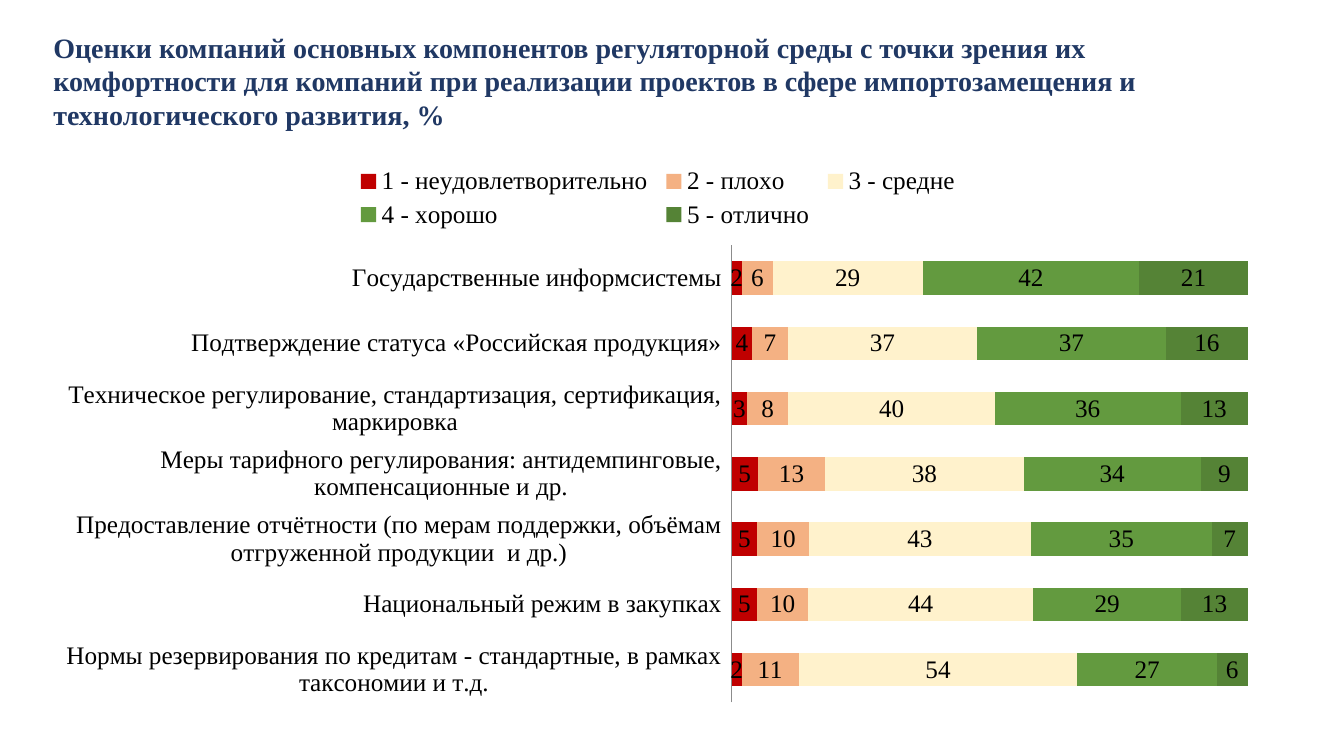
from lxml.etree import SubElement
from pptx import Presentation
from pptx.chart.data import CategoryChartData
from pptx.dml.color import RGBColor
from pptx.enum.chart import XL_CHART_TYPE as ChartType, XL_LEGEND_POSITION as LegendPosition
from pptx.enum.chart import XL_TICK_LABEL_POSITION as LabelPosition, XL_TICK_MARK as TickMark
from pptx.enum.text import MSO_AUTO_SIZE as AutoSize
from pptx.oxml.ns import qn
from pptx.util import Inches, Pt

FONT = "Times New Roman"
NAVY = RGBColor(0x20, 0x38, 0x64)
BLACK = RGBColor(0x00, 0x00, 0x00)
GREY = RGBColor(0x8C, 0x8C, 0x8C)
RED = RGBColor(0xC0, 0x00, 0x00)
ORANGE = RGBColor(0xF4, 0xB1, 0x83)
CREAM = RGBColor(0xFF, 0xF2, 0xCC)
GREEN = RGBColor(0x63, 0x9A, 0x3F)
DARK_GREEN = RGBColor(0x55, 0x83, 0x36)

HEADING = (
    "Оценки компаний основных компонентов регуляторной среды с точки зрения их "
    "комфортности для компаний при реализации проектов в сфере импортозамещения и "
    "технологического развития, %"
)
COMPONENTS = [
    "Государственные информсистемы",
    "Подтверждение статуса «Российская продукция»",
    "Техническое регулирование, стандартизация, сертификация, маркировка",
    "Меры тарифного регулирования: антидемпинговые, компенсационные и др.",
    "Предоставление отчётности (по мерам поддержки, объёмам отгруженной продукции  и др.)",
    "Национальный режим в закупках",
    "Нормы резервирования по кредитам - стандартные, в рамках таксономии и т.д.",
]
RATINGS = [
    ("1 - неудовлетворительно", RED, (2, 4, 3, 5, 5, 5, 2)),
    ("2 - плохо", ORANGE, (6, 7, 8, 13, 10, 10, 11)),
    ("3 - средне", CREAM, (29, 37, 40, 38, 43, 44, 54)),
    ("4 - хорошо", GREEN, (42, 37, 36, 34, 35, 29, 27)),
    ("5 - отлично", DARK_GREEN, (21, 16, 13, 9, 7, 13, 6)),
]
PLOT_FRAME = (0.56, 0.16, 0.42, 0.82)
LEGEND_FRAME = (0.25, 0.01, 0.5, 0.13)


def style_font(font, size, color):
    font.name = FONT
    font.size = Pt(size)
    font.color.rgb = color


def place(part, position, frame, inner=False):
    for previous in part.findall(qn("c:layout")):
        part.remove(previous)
    layout = SubElement(part, qn("c:layout"))
    part.insert(position, layout)
    manual = SubElement(layout, qn("c:manualLayout"))
    if inner:
        SubElement(manual, qn("c:layoutTarget")).set("val", "inner")
    for tag in ("xMode", "yMode"):
        SubElement(manual, qn(f"c:{tag}")).set("val", "edge")
    for tag, share in zip("xywh", frame):
        SubElement(manual, qn(f"c:{tag}")).set("val", str(share))


def add_heading(slide):
    box = slide.shapes.add_textbox(Inches(0.43), Inches(0.25), Inches(11.68), Inches(1.11))
    box.text_frame.word_wrap = True
    box.text_frame.auto_size = AutoSize.SHAPE_TO_FIT_TEXT
    heading = box.text_frame.paragraphs[0]
    heading.text = HEADING
    style_font(heading.font, 20, NAVY)
    heading.font.bold = True


def add_ratings(slide):
    data = CategoryChartData(number_format="0")
    data.categories = COMPONENTS
    for name, _, shares in RATINGS:
        data.add_series(name, shares)
    chart = slide.shapes.add_chart(
        ChartType.BAR_STACKED_100, Inches(0.43), Inches(1.55), Inches(12.19), Inches(5.53), data
    ).chart
    style_font(chart.font, 18, BLACK)
    chart.has_title = False

    bars = chart.plots[0]
    bars.gap_width = 95
    bars.overlap = 100
    bars.vary_by_categories = False
    for rating, (_, color, _) in zip(bars.series, RATINGS):
        rating.format.fill.solid()
        rating.format.fill.fore_color.rgb = color
        labels = rating.data_labels
        labels.show_value = True
        labels.number_format = "0"
        labels.number_format_is_linked = False
        style_font(labels.font, 18, BLACK)

    components = chart.category_axis
    components.reverse_order = True
    components.major_tick_mark = components.minor_tick_mark = TickMark.NONE
    components.tick_label_position = LabelPosition.LOW
    components.format.line.color.rgb = GREY
    components.format.line.width = Pt(0.5)
    style_font(components.tick_labels.font, 18, BLACK)
    chart.value_axis.visible = False
    chart.value_axis.has_major_gridlines = False

    chart.has_legend = True
    legend = chart.legend
    legend.position = LegendPosition.TOP
    legend.include_in_layout = False
    style_font(legend.font, 18, BLACK)
    legend_part = chart.element.find(".//" + qn("c:legend"))
    place(legend_part, 1, LEGEND_FRAME)
    place(chart.element.find(".//" + qn("c:plotArea")), 0, PLOT_FRAME, inner=True)


def main():
    deck = Presentation()
    deck.slide_width = Inches(13.33)
    deck.slide_height = Inches(7.5)
    slide = deck.slides.add_slide(deck.slide_layouts[6])
    add_ratings(slide)
    add_heading(slide)
    deck.save("out.pptx")


if __name__ == "__main__":
    main()
